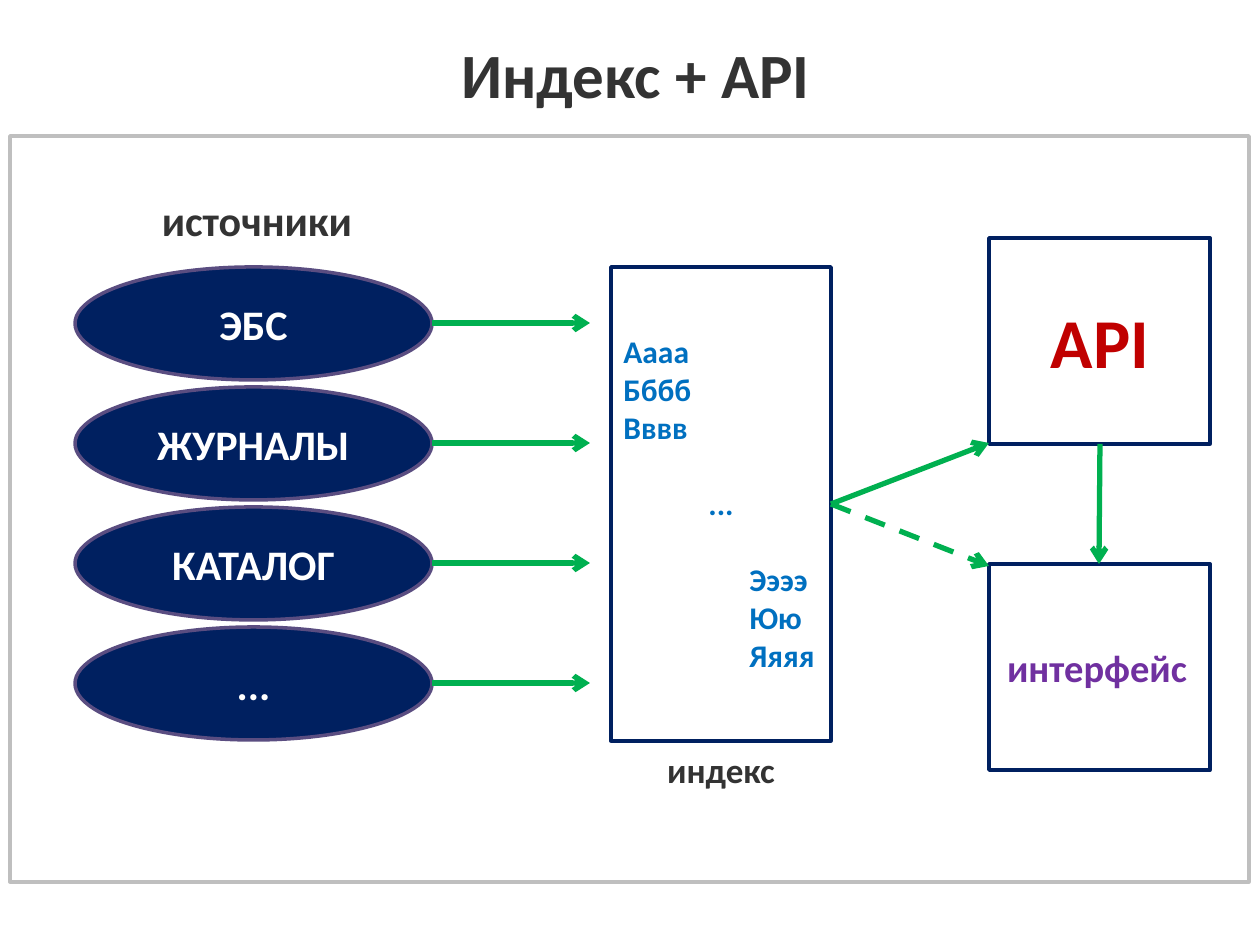
import pptx
import pptx.util
import pptx.dml.color
import pptx.enum.dml
import pptx.enum.shapes
import pptx.enum.text
import pptx.oxml.ns
from lxml import etree

PX = 914400 / 126
WHITE = pptx.dml.color.RGBColor(0xFF, 0xFF, 0xFF)
GRAY = pptx.dml.color.RGBColor(0xBF, 0xBF, 0xBF)
DARK = pptx.dml.color.RGBColor(0x33, 0x33, 0x33)
NAVY = pptx.dml.color.RGBColor(0x00, 0x20, 0x60)
VIOLET = pptx.dml.color.RGBColor(0x5A, 0x4D, 0x81)
PURPLE = pptx.dml.color.RGBColor(0x70, 0x30, 0xA0)
GREEN = pptx.dml.color.RGBColor(0x00, 0xB0, 0x50)
BLUE = pptx.dml.color.RGBColor(0x00, 0x70, 0xC0)
RED = pptx.dml.color.RGBColor(0xC0, 0x00, 0x00)
SHAPES = pptx.enum.shapes.MSO_SHAPE
ALIGN = pptx.enum.text.PP_ALIGN
MIDDLE = pptx.enum.text.MSO_ANCHOR.MIDDLE


def emu(*lengths):
    return [pptx.util.Emu(round(length * PX)) for length in lengths]


def write(paragraph, text, size, color, align=ALIGN.CENTER):
    paragraph.text = text
    paragraph.alignment = align
    font_format = {"name": "Calibri", "size": pptx.util.Pt(size), "bold": True}
    for run in paragraph.runs:
        for name, value in font_format.items():
            setattr(run.font, name, value)
        run.font.color.rgb = color


presentation = pptx.Presentation()
presentation.slide_width, presentation.slide_height = emu(1260, 945)
slide = presentation.slides.add_slide(presentation.slide_layouts[5])

# Title
title = slide.shapes.title
title.left, title.top, title.width, title.height = emu(16, 21, 1239, 105)
title.text_frame.vertical_anchor = MIDDLE
write(title.text_frame.paragraphs[0], "Индекс + API", 36, DARK)

# Frame, source ellipses, index box, API box and interface box
SOURCES = ["ЭБС", "ЖУРНАЛЫ", "КАТАЛОГ", "..."]
SOURCE_TOP, SOURCE_HEIGHT, SOURCE_STEP = 267, 113, 120
outlines = [(SHAPES.RECTANGLE, (10, 136, 1239, 746), WHITE, GRAY, "")]
for index, source in enumerate(SOURCES):
    box = (75, SOURCE_TOP + index * SOURCE_STEP, 357, SOURCE_HEIGHT)
    outlines.append((SHAPES.OVAL, box, NAVY, VIOLET, source))
for box in [(611, 267, 220, 474), (989, 238, 221, 206), (989, 564, 221, 206)]:
    outlines.append((SHAPES.RECTANGLE, box, None, NAVY, ""))

for kind, box, fill, line, text in outlines:
    shape = slide.shapes.add_shape(kind, *emu(*box))
    shape.shadow.inherit = False
    if fill is None:
        shape.fill.background()
    else:
        shape.fill.solid()
        shape.fill.fore_color.rgb = fill
    shape.line.color.rgb = line
    shape.line.width = pptx.util.Pt(2)
    if text:
        shape.text_frame.vertical_anchor = MIDDLE
        write(shape.text_frame.paragraphs[0], text, 24, WHITE)

# Captions
captions = [
    ("источники", (148, 188, 218, 63), 24, DARK),
    ("индекс", (611, 742, 220, 55), 20, DARK),
    ("API", (990, 292, 220, 97), 40, RED),
    ("интерфейс", (987, 638, 220, 59), 22, PURPLE),
]
for text, box, size, color in captions:
    caption = slide.shapes.add_textbox(*emu(*box))
    caption.text_frame.word_wrap = True
    write(caption.text_frame.paragraphs[0], text, size, color)

# Index entries: first letters, ellipsis, last letters
entries = slide.shapes.add_textbox(*emu(611, 326, 220, 357)).text_frame
entries.word_wrap = True
groups = [
    (["Аааа", "Бббб", "Вввв"], ALIGN.LEFT, 0),
    (["..."], ALIGN.CENTER, 0),
    (["Ээээ", "Юю", "Яяяя"], ALIGN.LEFT, 126),
]
paragraph = entries.paragraphs[0]
for group_index, (words, align, indent) in enumerate(groups):
    for word_index, word in enumerate(words):
        if group_index or word_index:
            paragraph = entries.add_paragraph()
        if group_index and word_index == 0:
            paragraph.space_before = pptx.util.Pt(22)
        write(paragraph, word, 18, BLUE, align)
        paragraph._p.get_or_add_pPr().set("marL", str(emu(indent)[0]))

# Arrows
arrows = []
for index in range(len(SOURCES)):
    middle = SOURCE_TOP + SOURCE_HEIGHT // 2 + index * SOURCE_STEP
    arrows.append((432, middle, 590, middle, False))
arrows += [
    (831, 504, 989, 566, True),
    (831, 504, 989, 443, False),
    (1100, 444, 1099, 564, False),
]
for *ends, dashed in arrows:
    arrow = slide.shapes.add_connector(
        pptx.enum.shapes.MSO_CONNECTOR.STRAIGHT, *emu(*ends))
    arrow.line.color.rgb = GREEN
    arrow.line.width = pptx.util.Pt(3)
    if dashed:
        arrow.line.dash_style = pptx.enum.dml.MSO_LINE.DASH
    tail = etree.SubElement(arrow.line._get_or_add_ln(), pptx.oxml.ns.qn("a:tailEnd"))
    tail.set("type", "arrow")
    etree.SubElement(arrow._element.spPr, pptx.oxml.ns.qn("a:effectLst"))

presentation.save("out.pptx")
